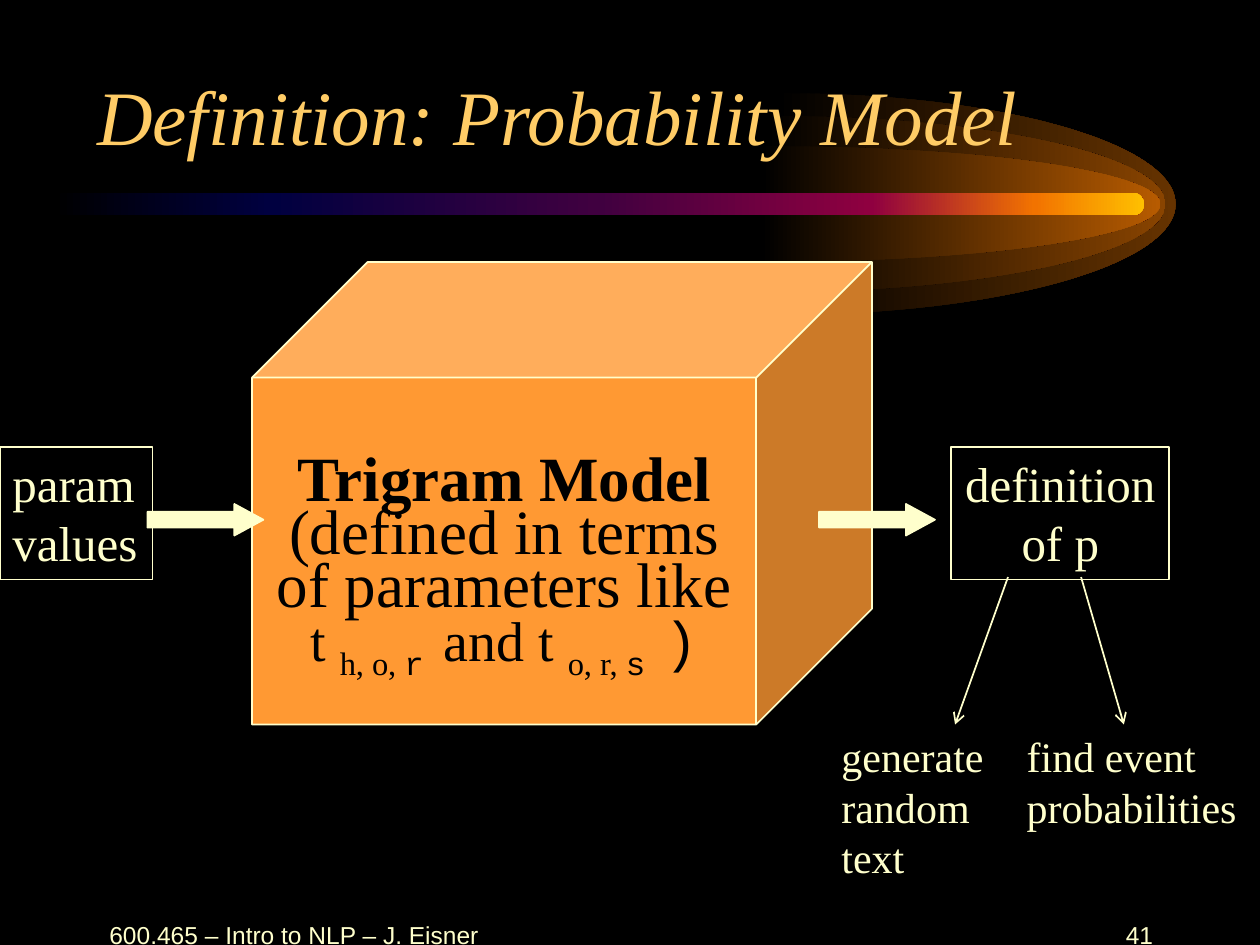
"""Build the slide defining a probability model."""
from dataclasses import dataclass

from lxml import etree
from pptx import Presentation
from pptx.dml.color import RGBColor
from pptx.enum.shapes import MSO_CONNECTOR, MSO_SHAPE
from pptx.enum.text import MSO_ANCHOR, MSO_AUTO_SIZE, PP_ALIGN
from pptx.oxml.ns import qn
from pptx.util import Inches, Pt

LEFT, CENTER, RIGHT = PP_ALIGN.LEFT, PP_ALIGN.CENTER, PP_ALIGN.RIGHT
MIDDLE, BOTTOM, TOP = MSO_ANCHOR.MIDDLE, MSO_ANCHOR.BOTTOM, MSO_ANCHOR.TOP
FIXED, GROW = MSO_AUTO_SIZE.NONE, MSO_AUTO_SIZE.SHAPE_TO_FIT_TEXT
CUBE, RIGHT_ARROW = MSO_SHAPE.CUBE, MSO_SHAPE.RIGHT_ARROW
ROUNDED, STRAIGHT = MSO_SHAPE.ROUNDED_RECTANGLE, MSO_CONNECTOR.STRAIGHT
BLACK = RGBColor(0x00, 0x00, 0x00)
CREAM = RGBColor(0xFF, 0xFF, 0xCC)
GOLD = RGBColor(0xFF, 0xCC, 0x66)
ORANGE = RGBColor(0xFF, 0x99, 0x33)
DARK_BROWN = RGBColor(0x66, 0x33, 0x00)
BROWN = RGBColor(0x89, 0x44, 0x00)
LIGHT_BROWN = RGBColor(0xB7, 0x5B, 0x00)
NAVY = RGBColor(0x00, 0x00, 0x40)
PURPLE = RGBColor(0x40, 0x00, 0x40)
CRIMSON = RGBColor(0x8F, 0x00, 0x40)
FLAME = RGBColor(0xF2, 0x73, 0x00)
AMBER = RGBColor(0xFF, 0xBF, 0x00)
SERIF, SANS, MONO = "Times New Roman", "Arial", "Courier New"


@dataclass
class Glow:
    x: float
    ry: float
    color: RGBColor


@dataclass
class Label:
    lines: list[str]
    x: float
    y: float
    w: float
    h: float
    size: int
    align: PP_ALIGN = LEFT
    font: str = SERIF
    anchor: MSO_ANCHOR = TOP
    boxed: bool = False
    wrap: bool = False


@dataclass
class Piece:
    text: str
    size: int = 32
    font: str = SERIF
    bold: bool = False
    sub: bool = False


GLOWS = [Glow(6.2, 0.88, DARK_BROWN), Glow(6.12, 0.7, BROWN), Glow(6.08, 0.46, LIGHT_BROWN)]
BAR_STOPS = [(0, BLACK), (20, NAVY), (50, PURPLE), (75, CRIMSON), (90, FLAME), (100, AMBER)]
LABELS = [
    Label(["600.465 – Intro to NLP – J. Eisner"], 0.75, 7.17, 3.17, 0.5, 14, CENTER, SANS, MIDDLE, wrap=True),
    Label(["41"], 7.17, 7.17, 2.08, 0.5, 14, RIGHT, SANS, MIDDLE, wrap=True),
    Label(["param", "values"], 0, 3.55, 1.21, 1.05, 28, boxed=True),
    Label(["definition", "of p"], 7.55, 3.55, 1.73, 1.05, 28, CENTER, boxed=True),
    Label(["find event", "probabilities"], 8.05, 5.75, 1.87, 0.9, 24),
    Label(["generate", "random", "text"], 6.58, 5.75, 1.33, 1.3, 24),
]
MODEL_TEXT = [
    [Piece("Trigram Model", 36, bold=True)],
    [
        Piece("(defined in terms of parameters like ", 36),
        Piece("t "),
        Piece("h, o, ", sub=True),
        Piece("r ", font=MONO, sub=True),
        Piece("and t "),
        Piece("o, r, ", sub=True),
        Piece("s ", font=MONO, sub=True),
        Piece(")", font=MONO),
    ],
]
BLOCK_ARROW_XS = [1.17, 6.5]
USE_LINES = [(8, 7.58), (8.58, 8.92)]


def set_gradient(sp, stops: list[tuple[int, RGBColor]]) -> None:
    sp.shadow.inherit = False
    sp.line.fill.background()
    sp.fill.gradient()
    sp.fill.gradient_angle = 0
    gs_list = sp._element.spPr.find(".//" + qn("a:gsLst"))
    for gs in list(gs_list):
        gs_list.remove(gs)
    for percent, color in stops:
        gs = etree.SubElement(gs_list, qn("a:gs"), pos=str(percent * 1000))
        etree.SubElement(gs, qn("a:srgbClr"), val=str(color))


def add_glow(s, glow: Glow) -> None:
    rx, ry, cy, tip, k = 3.13, glow.ry, 1.62, 0.04, 0.55
    corners = [(tip, 0), (tip + rx, ry), (0, 2 * ry), (tip, ry)]
    points = [(Inches(glow.x - tip + x), Inches(cy - ry + y)) for x, y in corners]
    builder = s.shapes.build_freeform(*points[0], scale=1.0)
    builder.add_line_segments(points[1:], close=True)
    sp = builder.convert_to_shape()
    curves = [
        [(tip + k * rx, 0), (tip + rx, ry * (1 - k)), corners[1]],
        [(tip + rx, ry * (1 + k)), (tip + k * rx, 2 * ry), corners[2]],
    ]
    segments = sp._element.spPr.findall(".//" + qn("a:lnTo"))
    for segment, curve in zip(segments, curves):
        bezier = etree.Element(qn("a:cubicBezTo"))
        for x, y in curve:
            etree.SubElement(bezier, qn("a:pt"), x=str(Inches(x)), y=str(Inches(y)))
        segment.getparent().replace(segment, bezier)
    set_gradient(sp, [(0, BLACK), (100, glow.color)])


def add_solid(s, kind: MSO_SHAPE, x: float, y: float, w: float, h: float, color: RGBColor):
    sp = s.shapes.add_shape(kind, Inches(x), Inches(y), Inches(w), Inches(h))
    sp.shadow.inherit = False
    sp.fill.solid()
    sp.fill.fore_color.rgb = color
    sp.line.color.rgb = CREAM
    sp.line.width = Pt(1)
    return sp


def add_label(s, label: Label) -> None:
    sp = s.shapes.add_textbox(Inches(label.x), Inches(label.y), Inches(label.w), Inches(label.h))
    if label.boxed:
        sp.line.color.rgb = CREAM
        sp.line.width = Pt(1)
    tf = sp.text_frame
    tf.word_wrap = label.wrap
    tf.auto_size = FIXED if label.wrap else GROW
    tf.vertical_anchor = label.anchor
    tf.text = "\n".join(label.lines)
    for p in tf.paragraphs:
        p.alignment = label.align
        p.font.name = label.font
        p.font.size = Pt(label.size)
        p.font.color.rgb = CREAM


def add_model(s) -> None:
    sp = add_solid(s, CUBE, 2, 2.08, 4.92, 3.67, ORANGE)
    tf = sp.text_frame
    tf.word_wrap = True
    tf.vertical_anchor = MIDDLE
    tf.margin_top = Inches(0.28)
    for i, pieces in enumerate(MODEL_TEXT):
        p = tf.paragraphs[0] if i == 0 else tf.add_paragraph()
        p.alignment = CENTER
        p.line_spacing = 0.7
        for piece in pieces:
            r = p.add_run()
            r.text = piece.text
            r.font.name = piece.font
            r.font.size = Pt(piece.size)
            r.font.bold = piece.bold
            r.font.color.rgb = BLACK
            if piece.sub:
                r._r.get_or_add_rPr().set("baseline", "-25000")


def add_use_line(s, x1: float, x2: float) -> None:
    line = s.shapes.add_connector(STRAIGHT, Inches(x1), Inches(4.58), Inches(x2), Inches(5.75))
    line.line.color.rgb = CREAM
    line.line.width = Pt(1)
    etree.SubElement(line.line._get_or_add_ln(), qn("a:tailEnd"), type="arrow")
    etree.SubElement(line._element.spPr, qn("a:effectLst"))


def place_title(s) -> None:
    title = s.shapes.title
    title.left, title.top = Inches(0.67), Inches(0.08)
    title.width, title.height = Inches(8.5), Inches(1.25)
    tf = title.text_frame
    tf.auto_size = FIXED
    tf.vertical_anchor = BOTTOM
    tf.text = "Definition: Probability Model"
    p = tf.paragraphs[0]
    p.alignment = LEFT
    p.font.name = SERIF
    p.font.size = Pt(44)
    p.font.italic = True
    p.font.color.rgb = GOLD
    s.shapes._spTree.append(title._element)


def main() -> None:
    prs = Presentation()
    prs.slide_width, prs.slide_height = Inches(10), Inches(7.5)
    s = prs.slides.add_slide(prs.slide_layouts[5])
    s.background.fill.solid()
    s.background.fill.fore_color.rgb = BLACK
    for glow in GLOWS:
        add_glow(s, glow)
    bar = s.shapes.add_shape(ROUNDED, Inches(0.42), Inches(1.53), Inches(8.66), Inches(0.18))
    bar.adjustments[0] = 0.5
    set_gradient(bar, BAR_STOPS)
    place_title(s)
    add_model(s)
    for x in BLOCK_ARROW_XS:
        arrow = add_solid(s, RIGHT_ARROW, x, 4, 0.92, 0.25, CREAM)
        arrow.adjustments[1] = 0.92
    for label in LABELS:
        add_label(s, label)
    for x1, x2 in USE_LINES:
        add_use_line(s, x1, x2)
    prs.save("out.pptx")


if __name__ == "__main__":
    main()
